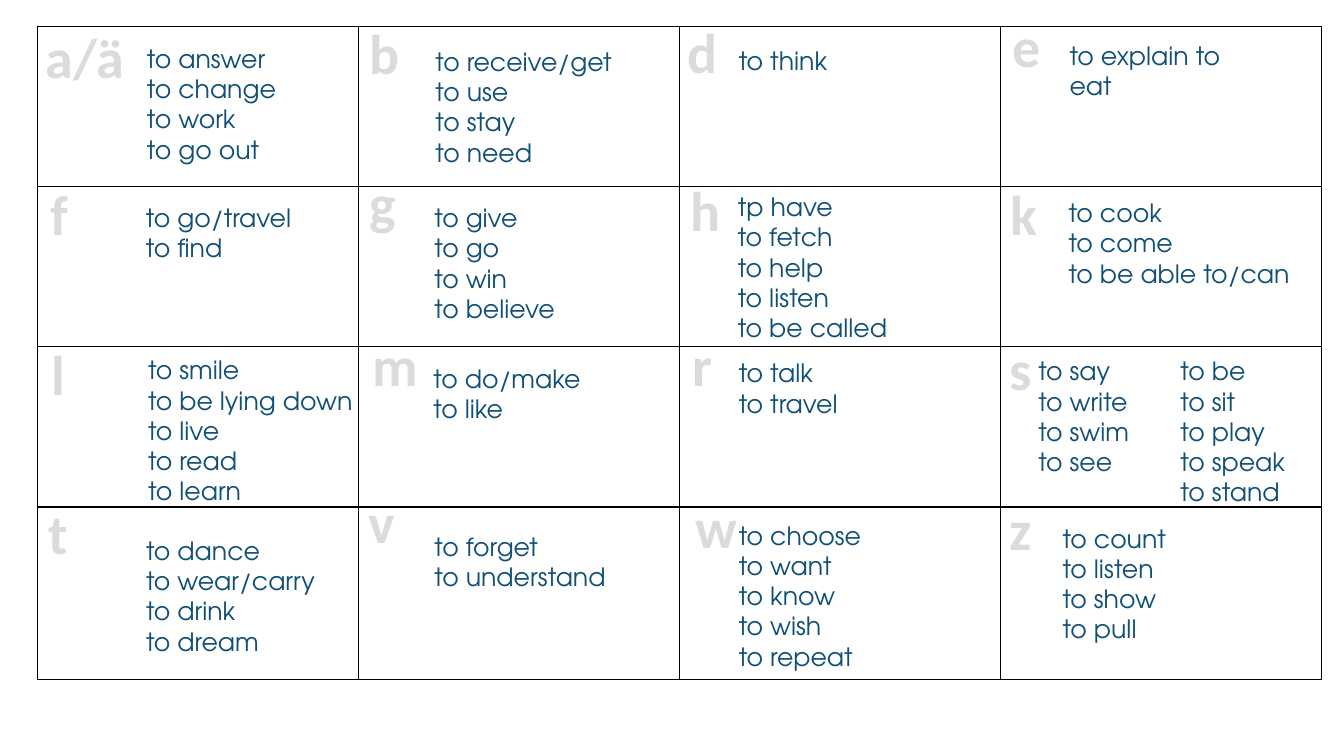
from lxml import etree
from pptx import Presentation
from pptx.dml.color import RGBColor
from pptx.enum import dml, text
from pptx.oxml import ns
from pptx.util import Inches, Pt

BLACK = RGBColor(0x00, 0x00, 0x00)
VERB_BLUE = RGBColor(0x11, 0x50, 0x76)
LETTER_STRIPE = RGBColor(0xA5, 0xA5, 0xA5)
LETTER_GREY = RGBColor(0xDB, 0xDB, 0xDB)
LETTER_OUTLINE = RGBColor(0x52, 0x52, 0x52)

COLUMN_WIDTHS = [3.185] * 4
ROW_HEIGHTS = [1.59, 1.59, 1.59, 1.71]
LETTER_WIDTH = 0.43
LETTER_HEIGHT = 0.77
LINE_HEIGHT = 0.303
BOX_MARGINS = 0.1
SECOND_COLUMN = 1.41

LETTERS = [
    ("d", 6.72, 0.12), ("e", 9.94, 0.07),
    ("f", 0.37, 1.73), ("g", 3.57, 1.62), ("h", 6.75, 1.69), ("k", 9.92, 1.73),
    ("l", 0.36, 3.32), ("m", 3.6, 3.23), ("r", 6.75, 3.23), ("s", 9.91, 3.27),
    ("t", 0.36, 4.9), ("v", 3.56, 4.79), ("w", 6.8, 4.84), ("z", 9.91, 4.86),
]
WIDE_LETTERS = [("a/ä", 0.34, 0.17, 1), ("b", 3.56, 0.13, 0.5)]

VERBS = [
    (1.36, 0.38, 1.74, ["to answer", "to change", "to work", "to go out"]),
    (4.22, 0.41, 2.07, ["to receive/get", "to use", "to stay", "to need"]),
    (7.23, 0.4, 1.86, ["to think"]),
    (10.51, 0.35, 1.71, ["to explain to eat"]),
    (1.35, 1.96, 1.74, ["to go/travel", "to find"]),
    (4.21, 1.96, 1.71, ["to give", "to go", "to win", "to believe"]),
    (7.22, 1.85, 1.86, ["tp have", "to fetch", "to help", "to listen", "to be called"]),
    (10.5, 1.91, 2.58, ["to cook", "to come", "to be able to/can"]),
    (1.37, 3.47, 2.67, ["to smile", "to be lying down", "to live", "to read", "to learn"]),
    (4.2, 3.55, 1.71, ["to do/make", "to like"]),
    (7.23, 3.5, 1.86, ["to talk", "to travel"]),
    (10.2, 3.48, 2.88, ["to say\tto be", "to write\tto sit", "to swim\tto play",
                        "to see\tto speak", "\tto stand"]),
    (1.35, 5.26, 1.98, ["to dance", "to wear/carry", "to drink", "to dream"]),
    (4.21, 5.22, 2.08, ["to forget", "to understand"]),
    (7.23, 5.11, 1.86, ["to choose", "to want", "to know", "to wish", "to repeat"]),
    (10.44, 5.14, 2.02, ["to count", "to listen", "to show", "to pull"]),
]


def make_line(tag, width, color):
    line = etree.Element(ns.qn(tag), w=str(Pt(width)))
    fill = etree.SubElement(line, ns.qn("a:solidFill"))
    etree.SubElement(fill, ns.qn("a:srgbClr"), val=str(color))
    return line


def add_grid(slide):
    frame = slide.shapes.add_table(
        len(ROW_HEIGHTS), len(COLUMN_WIDTHS), Inches(0.37), Inches(0.26),
        Inches(sum(COLUMN_WIDTHS)), Inches(sum(ROW_HEIGHTS)))
    table = frame.table
    table.first_row = False
    table.horz_banding = False
    for column, width in zip(table.columns, COLUMN_WIDTHS):
        column.width = Inches(width)
    for row, height in zip(table.rows, ROW_HEIGHTS):
        row.height = Inches(height)
    for cell in table.iter_cells():
        cell.fill.background()
        properties = cell._tc.get_or_add_tcPr()
        for index, side in enumerate(["a:lnL", "a:lnR", "a:lnT", "a:lnB"]):
            properties.insert(index, make_line(side, 1, BLACK))


def add_text_box(slide, left, top, width, height, wrap=True):
    box = slide.shapes.add_textbox(Inches(left), Inches(top), Inches(width), Inches(height))
    frame = box.text_frame
    frame.word_wrap = wrap
    frame.auto_size = text.MSO_AUTO_SIZE.SHAPE_TO_FIT_TEXT
    return frame.paragraphs[0]


def add_letter(slide, letter, left, top, width=LETTER_WIDTH, wrap=True):
    paragraph = add_text_box(slide, left, top, width, LETTER_HEIGHT, wrap)
    paragraph.alignment = text.PP_ALIGN.CENTER
    run = paragraph.add_run()
    run.text = letter
    font = run.font
    font.name = "Calibri"
    font.size = Pt(40)
    font.bold = True
    font.fill.patterned()
    font.fill.pattern = dml.MSO_PATTERN.NARROW_HORIZONTAL
    font.fill.fore_color.rgb = LETTER_STRIPE
    font.fill.back_color.rgb = LETTER_GREY
    run._r.get_or_add_rPr().insert(0, make_line("a:ln", 1, LETTER_OUTLINE))


def add_tab_stop(paragraph, position):
    properties = paragraph._p.get_or_add_pPr()
    stops = etree.SubElement(properties, ns.qn("a:tabLst"))
    etree.SubElement(stops, ns.qn("a:tab"), pos=str(Inches(position)), algn="l")


def add_verbs(slide, left, top, width, verbs):
    height = BOX_MARGINS + LINE_HEIGHT * len(verbs)
    paragraph = add_text_box(slide, left, top, width, height)
    if any("\t" in verb for verb in verbs):
        add_tab_stop(paragraph, SECOND_COLUMN)
    for index, verb in enumerate(verbs):
        if index:
            paragraph.add_line_break()
        run = paragraph.add_run()
        run.text = verb
        run.font.name = "TeX Gyre Adventor"
        run.font.size = Pt(18)
        run.font.color.rgb = VERB_BLUE


def main():
    presentation = Presentation()
    presentation.slide_width = Inches(13.33)
    presentation.slide_height = Inches(7.5)
    slide = presentation.slides.add_slide(presentation.slide_layouts[6])
    add_grid(slide)
    for letter, left, top in LETTERS:
        add_letter(slide, letter, left, top)
    for letter, left, top, width in WIDE_LETTERS:
        add_letter(slide, letter, left, top, width, wrap=False)
    for left, top, width, verbs in VERBS:
        add_verbs(slide, left, top, width, verbs)
    presentation.save("out.pptx")


if __name__ == "__main__":
    main()
